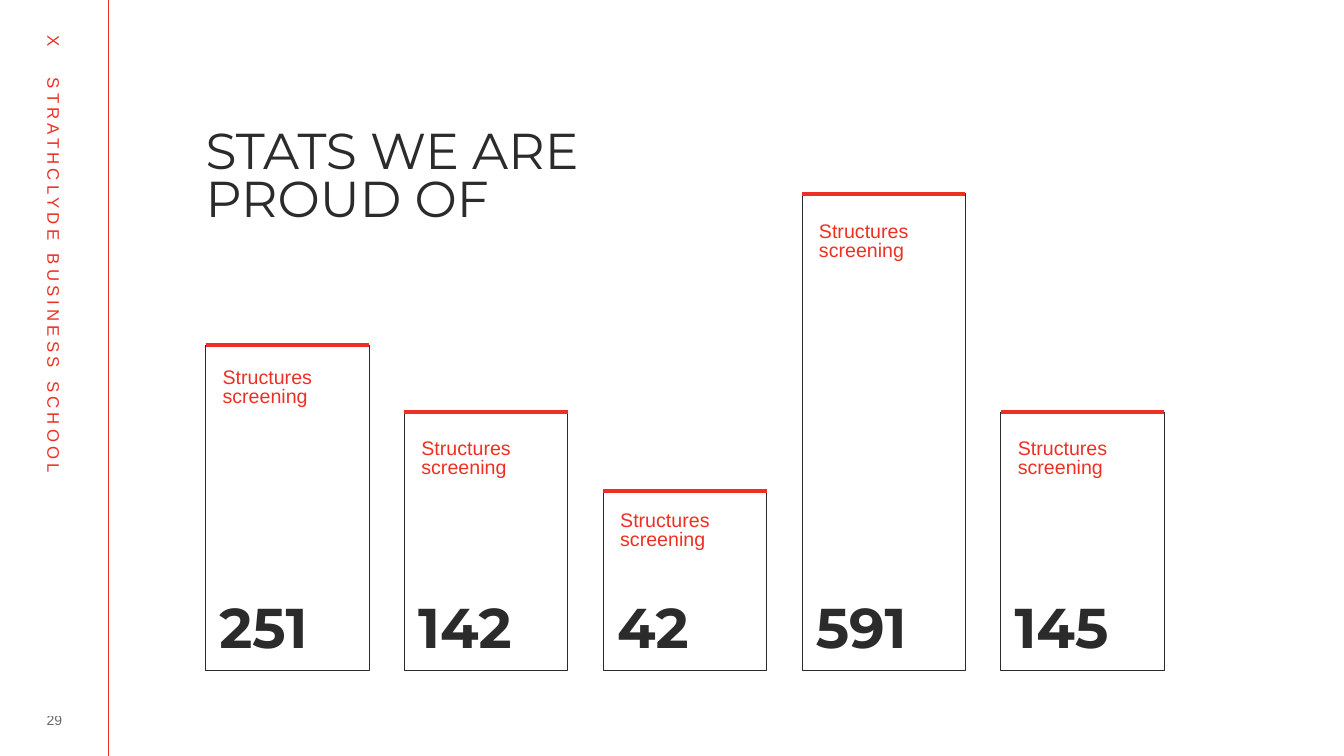
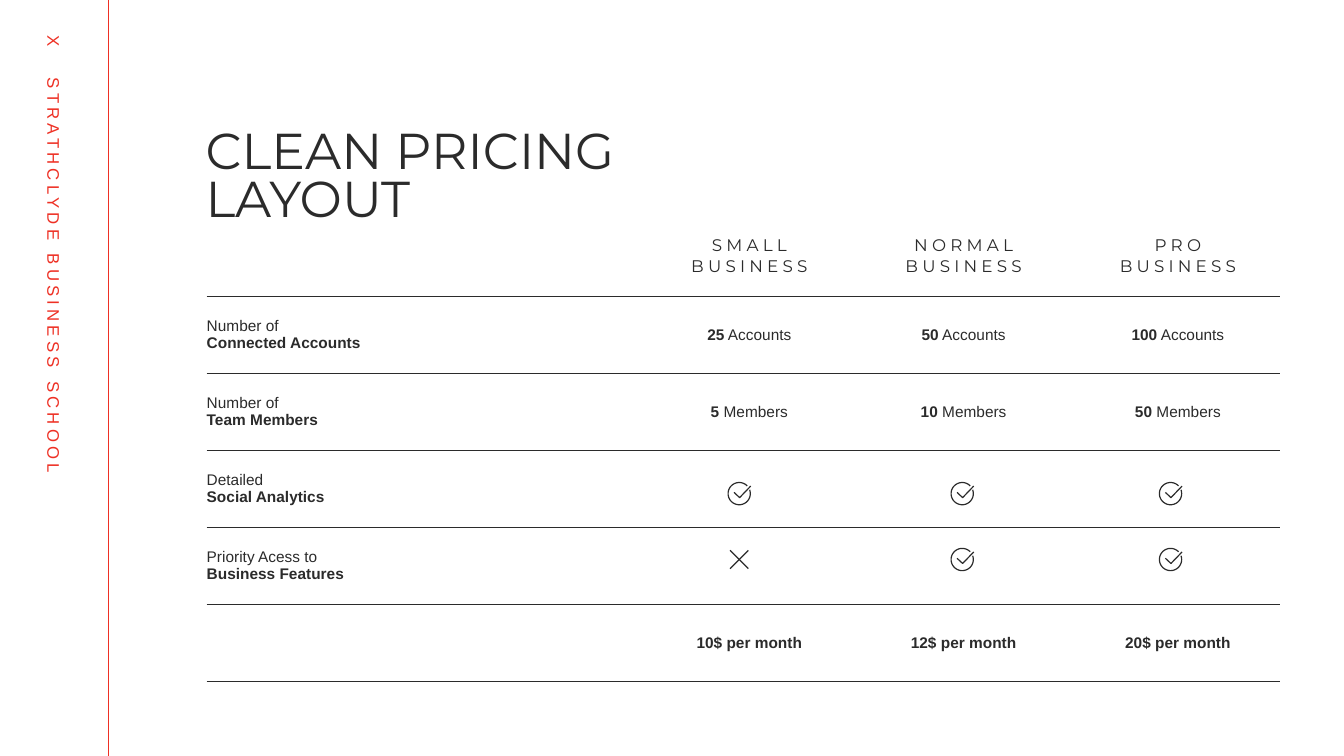
import math
from dataclasses import dataclass

from lxml import etree
from pptx import Presentation
from pptx import util as u
from pptx.dml.color import RGBColor
from pptx.enum import shapes, text
from pptx.oxml.ns import qn

Cm, Pt = u.Cm, u.Pt
CENTER = text.PP_ALIGN.CENTER
MIDDLE, BOTTOM = text.MSO_ANCHOR.MIDDLE, text.MSO_ANCHOR.BOTTOM
NO_STYLE = "{2D5ABB26-0587-4C30-8999-92F81FD0307C}"


@dataclass(frozen=True)
class Theme:
    ink: str = "2B2B2B"
    accent: str = "EE3024"
    cap: str = "ED2F24"
    body: str = "Arial"
    display: str = "Montserrat"
    title_size: float = 36
    figure_size: float = 40
    label_size: float = 14
    caption_size: float = 12
    cell_size: float = 11
    page_size: float = 10
    hairline: float = 0.5
    icon_line: float = 0.85
    cap_line: float = 3


class Deck:
    def __init__(self, theme):
        self.t = theme
        self.prs = Presentation()
        self.prs.slide_width, self.prs.slide_height = Cm(33.87), Cm(19.05)
        self.s = None

    def slide(self, title):
        t = self.t
        self.s = self.prs.slides.add_slide(self.prs.slide_layouts[6])
        self.line(2.74, 0, 2.74, 19.05, t.accent, t.hairline)
        sp = self.text(-5.84, 7.47, 14.4, 0.76, ["X\tSTRATHCLYDE BUSINESS SCHOOL"],
                       t.caption_size, color=t.accent, track=3, tab=1.06)
        sp.rotation = 90
        return self.text(5.18, 2.77, 11.73, 4.5, [title], t.title_size, t.display,
                         spacing=0.8, insets=(0, 0.53, 0, 0))

    def set_lines(self, tf, lines, size, font=None, color=None, bold=False,
                  align=None, spacing=None, track=0, tab=None):
        """Fill a frame; a line is a string or a list of (text, bold) parts."""
        for i, line in enumerate(lines):
            p = tf.paragraphs[0] if i == 0 else tf.add_paragraph()
            if tab:
                tabs = etree.SubElement(p._p.get_or_add_pPr(), qn("a:tabLst"))
                etree.SubElement(tabs, qn("a:tab"), pos=str(Cm(tab)), algn="l")
            p.alignment, p.line_spacing = align, spacing
            if isinstance(line, str):
                p.text = line
                weights = [bold] * len(p.runs)
            else:
                for part, _ in line:
                    p.add_run().text = part
                weights = [weight for _, weight in line]
            for r, weight in zip(p.runs, weights):
                r.font.size, r.font.name = Pt(size), font or self.t.body
                r.font.bold = weight
                r.font.color.rgb = RGBColor.from_string(color or self.t.ink)
                if track:
                    r.font._element.set("spc", str(track * 100))

    def text(self, x, y, w, h, lines, size, font=None, insets=None, anchor=None, **style):
        sp = self.s.shapes.add_textbox(Cm(x), Cm(y), Cm(w), Cm(h))
        tf = sp.text_frame
        tf.word_wrap = True
        if anchor is not None:
            tf.vertical_anchor = anchor
        if insets:
            self.inset(tf, insets)
        self.set_lines(tf, lines, size, font, **style)
        return sp

    def inset(self, holder, insets):
        """Set left, top, right and bottom margins of a frame or cell."""
        (holder.margin_left, holder.margin_top,
         holder.margin_right, holder.margin_bottom) = map(Cm, insets)

    def page_number(self, number):
        sp = self.text(0.66, 17.83, 1.42, 0.64, [number], self.t.page_size,
                       insets=(0, 0, 0, 0), anchor=MIDDLE, align=CENTER)
        for clr in sp._element.iter(qn("a:srgbClr")):
            etree.SubElement(clr, qn("a:alpha"), val="70000")

    def stroke(self, sp, color, width):
        sp.line.color.rgb = RGBColor.from_string(color)
        sp.line.width = Pt(width)

    def line(self, x1, y1, x2, y2, color, width):
        c = self.s.shapes.add_connector(shapes.MSO_CONNECTOR.STRAIGHT,
                                        Cm(x1), Cm(y1), Cm(x2), Cm(y2))
        self.stroke(c, color, width)
        etree.SubElement(c._element.spPr, qn("a:effectLst"))

    def frame(self, x, y, w, h):
        sp = self.s.shapes.add_shape(shapes.MSO_SHAPE.RECTANGLE, Cm(x), Cm(y), Cm(w), Cm(h))
        sp.shadow.inherit = False
        sp.fill.background()
        self.stroke(sp, self.t.ink, self.t.hairline)

    def icon(self, x, y, strokes):
        """Draw open strokes, given in cm from the centre x, y, as one outline."""
        outlines = [[(Cm(x + dx), Cm(y + dy)) for dx, dy in pts] for pts in strokes]
        fb = self.s.shapes.build_freeform(*outlines[0][0])
        fb.add_line_segments(outlines[0][1:], close=False)
        for pts in outlines[1:]:
            fb.move_to(*pts[0])
            fb.add_line_segments(pts[1:], close=False)
        sp = fb.convert_to_shape()
        sp.shadow.inherit = False
        sp.fill.background()
        self.stroke(sp, self.t.ink, self.t.icon_line)

    def table(self, x, y, widths, heights):
        gf = self.s.shapes.add_table(len(heights), len(widths), Cm(x), Cm(y),
                                     Cm(sum(widths)), Cm(sum(heights)))
        tbl = gf.table
        tbl.first_row = tbl.horz_banding = False
        tbl._tbl.tblPr.find(qn("a:tableStyleId")).text = NO_STYLE
        for col, w in zip(tbl.columns, widths):
            col.width = Cm(w)
        for row, h in zip(tbl.rows, heights):
            row.height = Cm(h)
        for cell in tbl.iter_cells():
            cell.fill.background()
            self.underline(cell)
        return tbl

    def underline(self, cell):
        ln = etree.Element(qn("a:lnB"), w=str(Pt(self.t.hairline)))
        fill = etree.SubElement(ln, qn("a:solidFill"))
        etree.SubElement(fill, qn("a:srgbClr"), val=self.t.ink)
        cell._tc.get_or_add_tcPr().insert(0, ln)

    def cell(self, cell, lines, insets, anchor=MIDDLE, size=None, **style):
        cell.vertical_anchor = anchor
        self.inset(cell, insets)
        self.set_lines(cell.text_frame, lines, size or self.t.cell_size, **style)


RING = [(0.28 * math.cos(math.radians(a)), 0.28 * math.sin(math.radians(a)))
        for a in range(-20, 320, 4)]
CHECK = [RING, [(-0.13, -0.03), (0.01, 0.1), (0.29, -0.19)]]
CROSS = [[(-0.23, -0.23), (0.23, 0.23)], [(0.23, -0.23), (-0.23, 0.23)]]


def stats_slide(d):
    t = d.t
    d.slide("STATS WE ARE\vPROUD OF")
    d.page_number("29")
    left, pitch, width, base = 5.18, 5.01, 4.12, 16.89
    bars = [("251", 8.7, 9.19), ("142", 10.39, 10.97), ("42", 12.37, 12.8),
            ("591", 4.88, 5.51), ("145", 10.39, 10.97)]
    for i, (figure, top, label_top) in enumerate(bars):
        x = left + i * pitch
        d.frame(x, top, width, base - top)
        d.line(x, top, x + width, top, t.cap, t.cap_line)
        d.text(x + 0.18, label_top, 3.94, 2.36, ["Structures", "screening"],
               t.label_size, color=t.accent, spacing=0.8)
        d.text(x + 0.1, 15.14, 4.04, 1.42, [figure], t.figure_size, t.display,
               bold=True, spacing=0.8)


def pricing_slide(d):
    t = d.t
    title = d.slide("CLEAN PRICING LAYOUT")
    tbl = d.table(5.21, 3.3, [10.85] + [5.4] * 3, [4.17] + [1.94] * 5)
    label_insets, value_insets = (0, 0.13, 0.25, 0.13), (0.25, 0.13, 0, 0.13)

    for c, plan in enumerate(["SMALL", "NORMAL", "PRO"], 1):
        d.cell(tbl.cell(0, c), [plan, "BUSINESS"], (0.25, 0, 0, 0.51), BOTTOM,
               t.caption_size, font=t.display, align=CENTER, track=3)

    features = [("Number of", "Connected Accounts"), ("Number of", "Team Members"),
                ("Detailed", "Social Analytics"), ("Priority Acess to", "Business Features")]
    for r, (lead, name) in enumerate(features, 1):
        d.cell(tbl.cell(r, 0), [lead, [(name, True)]], label_insets)

    values = {1: ("Accounts", [25, 50, 100]), 2: ("Members", [5, 10, 50]),
              5: ("per month", ["10$", "12$", "20$"])}
    for r, (unit, amounts) in values.items():
        for c, amount in enumerate(amounts, 1):
            d.cell(tbl.cell(r, c), [[(str(amount), True), (" " + unit, r == 5)]],
                   value_insets, align=CENTER)

    for y, marks in [(12.44, [CHECK] * 3), (14.1, [CROSS, CHECK, CHECK])]:
        for x, mark in zip([18.63, 24.25, 29.5], marks):
            d.icon(x, y, mark)
    d.s.shapes._spTree.append(title._element)


def main():
    d = Deck(Theme())
    stats_slide(d)
    pricing_slide(d)
    d.prs.save("out.pptx")


if __name__ == "__main__":
    main()
